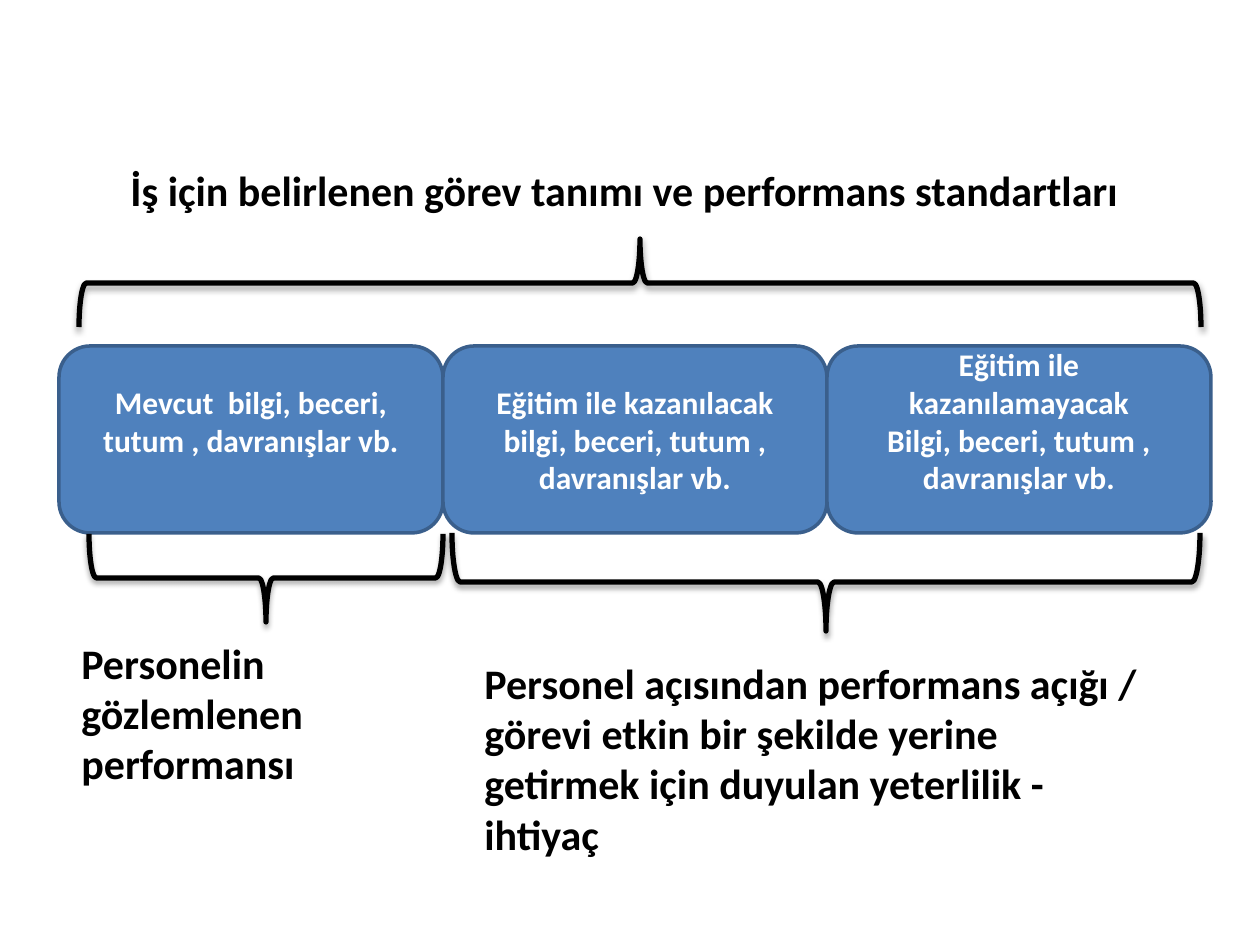
"""Build the training-need slide: three competence boxes framed by braces and captions."""

from dataclasses import dataclass

import lxml.etree
import pptx
import pptx.dml.color
import pptx.enum.shapes
import pptx.enum.text
import pptx.oxml.ns
import pptx.util

EMU_PER_PX = 914400 / 126


@dataclass(frozen=True)
class Theme:
    font: str = "Calibri"
    box_fill: str = "4F81BD"
    box_line: str = "3A5F8C"
    box_text: str = "FFFFFF"
    ink: str = "000000"
    box_size: int = 18
    caption_size: int = 24
    box_line_width: int = 2
    brace_line_width: int = 3


@dataclass(frozen=True)
class Area:
    left: int
    top: int
    width: int
    height: int


@dataclass(frozen=True)
class Box:
    text: str
    bottom_inset: int


@dataclass(frozen=True)
class Brace:
    area: Area
    rotation: int


@dataclass(frozen=True)
class Caption:
    text: str
    area: Area


THEME = Theme()
FIRST_BOX = Area(59, 346, 384, 187)
BOXES = (
    Box("Mevcut  bilgi, beceri, tutum , davranışlar vb.", 44),
    Box("Eğitim ile kazanılacak\nbilgi, beceri, tutum , davranışlar vb.", 6),
    Box("Eğitim ile kazanılamayacak\nBilgi, beceri, tutum , davranışlar vb.", 44),
)
BRACES = (
    Brace(Area(79, 239, 1122, 88), 270),
    Brace(Area(89, 534, 354, 88), 90),
    Brace(Area(452, 533, 748, 98), 90),
)
CAPTIONS = (
    Caption("İş için belirlenen görev tanımı ve performans standartları", Area(118, 158, 1063, 63)),
    Caption("Personelin gözlemlenen performansı", Area(69, 631, 354, 165)),
    Caption(
        "Personel açısından performans açığı / görevi etkin bir şekilde yerine "
        "getirmek için duyulan yeterlilik - ihtiyaç",
        Area(472, 651, 689, 217),
    ),
)


def px(length: float) -> int:
    """Convert pixels to EMU."""
    return round(length * EMU_PER_PX)


def color(value: str) -> pptx.dml.color.RGBColor:
    """Return a colour object for a hex value."""
    return pptx.dml.color.RGBColor.from_string(value)


def place(area: Area) -> tuple[int, int, int, int]:
    """Return an area as EMU arguments."""
    return px(area.left), px(area.top), px(area.width), px(area.height)


def write(
    text_frame: pptx.text.text.TextFrame,
    text: str,
    size: int,
    ink: str,
    alignment: pptx.enum.text.PP_ALIGN,
) -> None:
    """Fill a text frame with bold, wrapped text."""
    text_frame.text = text
    text_frame.word_wrap = True
    for paragraph in text_frame.paragraphs:
        paragraph.alignment = alignment
        for run in paragraph.runs:
            run.font.name = THEME.font
            run.font.size = pptx.util.Pt(size)
            run.font.bold = True
            run.font.color.rgb = color(ink)


def set_line(shape: pptx.shapes.autoshape.Shape, line_color: str, width: int) -> None:
    """Give a shape its outline and clear its inherited shadow."""
    shape.line.color.rgb = color(line_color)
    shape.line.width = pptx.util.Pt(width)
    shape.shadow.inherit = False


def add_soft_shadow(shape: pptx.shapes.autoshape.Shape) -> None:
    """Add a faint shadow falling straight down."""
    qn = pptx.oxml.ns.qn
    effects = shape.element.spPr.find(qn("a:effectLst"))
    shadow = lxml.etree.SubElement(
        effects, qn("a:outerShdw"),
        blurRad="40000", dist="23000", dir="5400000", rotWithShape="0",
    )
    shade = lxml.etree.SubElement(shadow, qn("a:srgbClr"), val=THEME.ink)
    lxml.etree.SubElement(shade, qn("a:alpha"), val="35000")


def draw_box(slide: pptx.slide.Slide, box: Box, area: Area) -> None:
    """Draw one rounded competence box."""
    shape = slide.shapes.add_shape(
        pptx.enum.shapes.MSO_SHAPE.ROUNDED_RECTANGLE, *place(area)
    )
    shape.fill.solid()
    shape.fill.fore_color.rgb = color(THEME.box_fill)
    set_line(shape, THEME.box_line, THEME.box_line_width)
    shape.text_frame.vertical_anchor = pptx.enum.text.MSO_ANCHOR.MIDDLE
    shape.text_frame.margin_bottom = px(box.bottom_inset)
    write(shape.text_frame, box.text, THEME.box_size, THEME.box_text,
          pptx.enum.text.PP_ALIGN.CENTER)


def draw_brace(slide: pptx.slide.Slide, brace: Brace) -> None:
    """Draw a brace turned on its side so that it covers its area."""
    area = brace.area
    offset = (area.width - area.height) / 2
    shape = slide.shapes.add_shape(
        pptx.enum.shapes.MSO_SHAPE.RIGHT_BRACE,
        px(area.left + offset), px(area.top - offset), px(area.height), px(area.width),
    )
    shape.rotation = brace.rotation
    shape.fill.background()
    set_line(shape, THEME.ink, THEME.brace_line_width)
    add_soft_shadow(shape)


def draw_caption(slide: pptx.slide.Slide, caption: Caption) -> None:
    """Draw one bold caption."""
    text_frame = slide.shapes.add_textbox(*place(caption.area)).text_frame
    write(text_frame, caption.text, THEME.caption_size, THEME.ink,
          pptx.enum.text.PP_ALIGN.LEFT)
    text_frame.auto_size = pptx.enum.text.MSO_AUTO_SIZE.SHAPE_TO_FIT_TEXT


def main() -> None:
    """Build and save the presentation."""
    presentation = pptx.Presentation()
    presentation.slide_width = px(1260)
    presentation.slide_height = px(945)
    slide = presentation.slides.add_slide(presentation.slide_layouts[6])
    for index, box in enumerate(BOXES):
        left = FIRST_BOX.left + index * FIRST_BOX.width
        draw_box(slide, box, Area(left, FIRST_BOX.top, FIRST_BOX.width, FIRST_BOX.height))
    for brace in BRACES:
        draw_brace(slide, brace)
    for caption in CAPTIONS:
        draw_caption(slide, caption)
    presentation.save("out.pptx")


if __name__ == "__main__":
    main()
